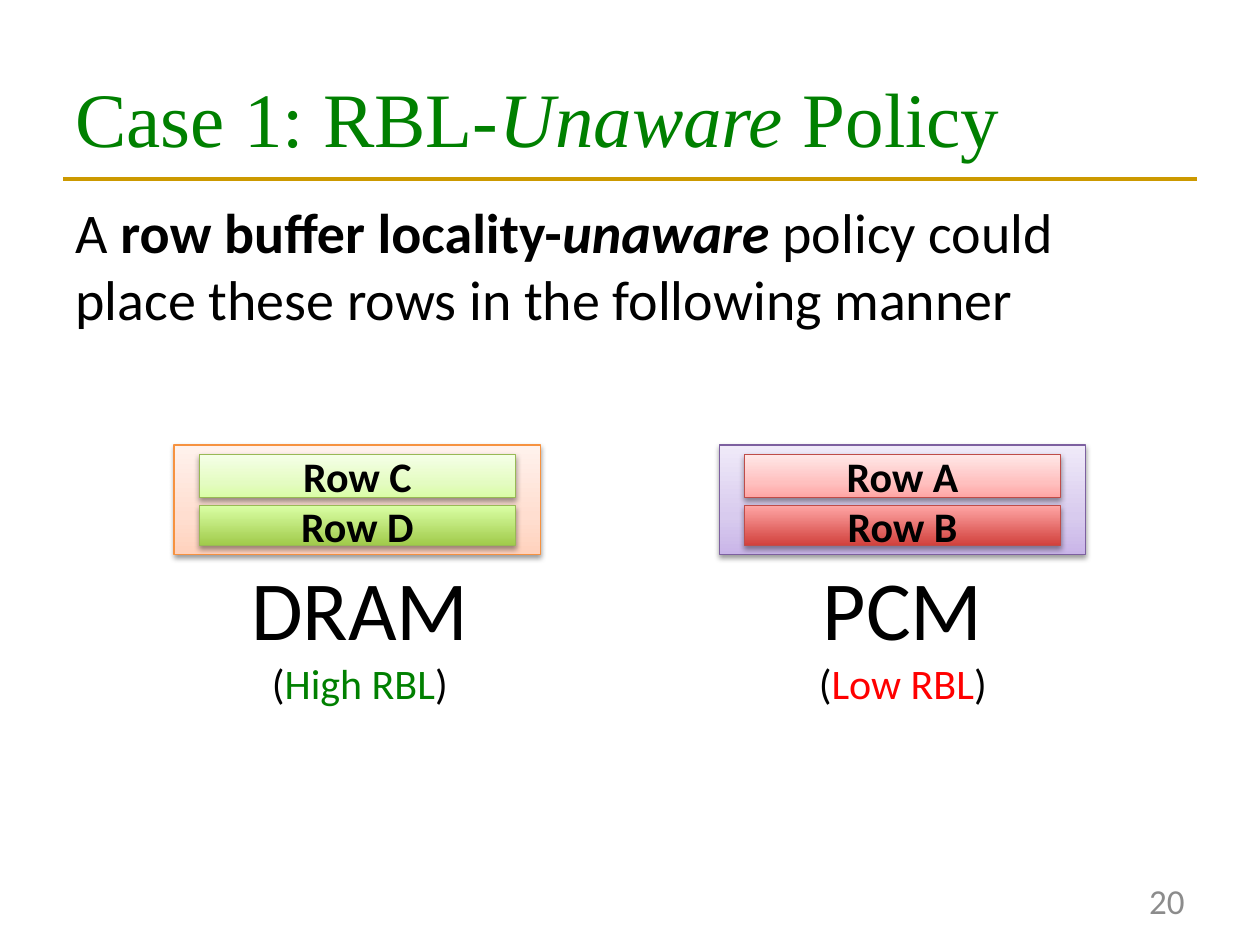
from lxml import etree
from pptx import Presentation
from pptx import util as u
from pptx.dml.color import RGBColor
from pptx.enum import shapes, text
from pptx.oxml import ns

BLACK = RGBColor(0x00, 0x00, 0x00)
GREEN = RGBColor(0x00, 0x80, 0x00)
RED = RGBColor(0xFF, 0x00, 0x00)
GRAY = RGBColor(0x8C, 0x8C, 0x8C)
GOLD = RGBColor(0xCC, 0x99, 0x00)
ORANGE_EDGE = RGBColor(0xF6, 0x92, 0x40)
PURPLE_EDGE = RGBColor(0x7D, 0x60, 0xA0)
GREEN_EDGE = RGBColor(0x98, 0xB9, 0x55)
RED_EDGE = RGBColor(0xBF, 0x4C, 0x48)


def stops(*pairs):
    return [(position, RGBColor.from_string(color)) for position, color in pairs]


ORANGE_FILL = stops((0, "FFD2BD"), (35, "FFDED0"), (100, "FFF2ED"))
PURPLE_FILL = stops((0, "C9B5E8"), (35, "D8CBEE"), (100, "F0EAF9"))
PALE_GREEN_FILL = stops((0, "DAFDA7"), (35, "E4FCC2"), (100, "F5FFE7"))
DEEP_GREEN_FILL = stops((0, "A0CA4A"), (100, "DAFFA5"))
PALE_RED_FILL = stops((0, "FFA6A5"), (35, "FFC0BF"), (100, "FFE7E7"))
DEEP_RED_FILL = stops((0, "D1403C"), (100, "FFA6A5"))

PANEL_TOP, PANEL_WIDTH, PANEL_HEIGHT = 8.97, 7.39, 2.21
ROW_INSET = 0.51
ROW_PLACES = [(9.17, 0.86), (10.19, 0.81)]


def place(shape, left, top, width, height):
    shape.left, shape.top = u.Cm(left), u.Cm(top)
    shape.width, shape.height = u.Cm(width), u.Cm(height)


def add_child(parent, tag, **attributes):
    values = {name: str(value) for name, value in attributes.items()}
    return etree.SubElement(parent, ns.qn(tag), values)


def style(para, size, color=BLACK, name="Calibri", align=text.PP_ALIGN.LEFT):
    para.alignment = align
    para.font.size = u.Pt(size)
    para.font.name = name
    para.font.color.rgb = color


def add_span(para, words, bold=None, italic=None, size=None, color=None):
    span = para.add_run()
    span.text = words
    span.font.bold = bold
    span.font.italic = italic
    span.font.size = u.Pt(size) if size else None
    if color is not None:
        span.font.color.rgb = color


def add_text(page, left, top, width, height):
    box = page.shapes.add_textbox(*map(u.Cm, (left, top, width, height)))
    box.text_frame.word_wrap = False
    return box.text_frame


def add_rule(page):
    rule = page.shapes.add_connector(
        shapes.MSO_CONNECTOR.STRAIGHT, u.Cm(1.27), u.Cm(3.61), u.Cm(24.13), u.Cm(3.61))
    rule.line.color.rgb = GOLD
    rule.line.width = u.Pt(2.25)
    add_child(rule._element.spPr, "a:effectLst")


def add_title(page):
    title = page.shapes.title
    place(title, 1.27, 0.76, 22.86, 3.18)
    frame = title.text_frame
    frame.auto_size = text.MSO_AUTO_SIZE.NONE
    frame.vertical_anchor = text.MSO_ANCHOR.MIDDLE
    para = frame.paragraphs[0]
    style(para, 44, GREEN, "Times New Roman")
    add_span(para, "Case 1: RBL-")
    add_span(para, "Unaware ", italic=True)
    add_span(para, "Policy")


def add_statement(page):
    frame = add_text(page, 1.27, 3.86, 20.4, 3)
    first, second = frame.paragraphs[0], frame.add_paragraph()
    for para in (first, second):
        style(para, 32)
    add_span(first, "A ")
    add_span(first, "row buffer locality-", bold=True)
    add_span(first, "unaware ", bold=True, italic=True)
    add_span(first, "policy could")
    add_span(second, "place these rows in the following manner")


def add_bar(page, left, top, width, height, fill, edge):
    bar = page.shapes.add_shape(
        shapes.MSO_SHAPE.RECTANGLE, *map(u.Cm, (left, top, width, height)))
    bar.fill.gradient()
    bar.fill.gradient_angle = 90
    properties = bar._element.spPr
    stop_list = properties.find(".//" + ns.qn("a:gsLst"))
    stop_list.clear()
    for position, color in fill:
        stop = add_child(stop_list, "a:gs", pos=position * 1000)
        add_child(stop, "a:srgbClr", val=color)
    bar.line.color.rgb = edge
    bar.line.width = u.Pt(0.75)
    bar.shadow.inherit = False
    shadow = add_child(
        properties.find(ns.qn("a:effectLst")), "a:outerShdw", blurRad=u.Pt(3.1),
        dist=u.Pt(1.6), dir=5400000, rotWithShape=0)
    add_child(add_child(shadow, "a:srgbClr", val=BLACK), "a:alpha", val=38000)
    return bar


def add_row(page, left, top, height, words, fill, edge):
    width = PANEL_WIDTH - 2 * ROW_INSET
    row = add_bar(page, left + ROW_INSET, top, width, height, fill, edge)
    row.text_frame.vertical_anchor = text.MSO_ANCHOR.MIDDLE
    para = row.text_frame.paragraphs[0]
    style(para, 24, align=text.PP_ALIGN.CENTER)
    para.font.bold = True
    add_span(para, words)


def add_label(page, left, width, memory, locality, color):
    para = add_text(page, left, 11.1, width, 3.33).paragraphs[0]
    style(para, 24, align=text.PP_ALIGN.CENTER)
    add_span(para, memory, size=48)
    para.add_line_break()
    add_span(para, "(")
    add_span(para, locality, color=color)
    add_span(para, ")")


def add_memory(page, left, fill, edge, rows, row_edge):
    add_bar(page, left, PANEL_TOP, PANEL_WIDTH, PANEL_HEIGHT, fill, edge)
    for (top, height), (words, row_fill) in zip(ROW_PLACES, rows):
        add_row(page, left, top, height, words, row_fill, row_edge)


def add_page_number(page):
    frame = add_text(page, 18.21, 17.65, 5.92, 1.02)
    frame.word_wrap = True
    frame.vertical_anchor = text.MSO_ANCHOR.MIDDLE
    style(frame.paragraphs[0], 20, GRAY, align=text.PP_ALIGN.RIGHT)
    add_span(frame.paragraphs[0], "20")


def main():
    deck = Presentation()
    deck.slide_width, deck.slide_height = u.Cm(25.4), u.Cm(19.05)
    page = deck.slides.add_slide(deck.slide_layouts.get_by_name("Title Only"))
    add_rule(page)
    add_title(page)
    add_page_number(page)
    add_statement(page)
    add_memory(page, 3.51, ORANGE_FILL, ORANGE_EDGE,
               [("Row C", PALE_GREEN_FILL), ("Row D", DEEP_GREEN_FILL)], GREEN_EDGE)
    add_memory(page, 14.5, PURPLE_FILL, PURPLE_EDGE,
               [("Row A", PALE_RED_FILL), ("Row B", DEEP_RED_FILL)], RED_EDGE)
    add_label(page, 4.78, 4.95, "DRAM", "High RBL", GREEN)
    add_label(page, 16.23, 3.94, "PCM", "Low RBL", RED)
    deck.save("out.pptx")


if __name__ == "__main__":
    main()
